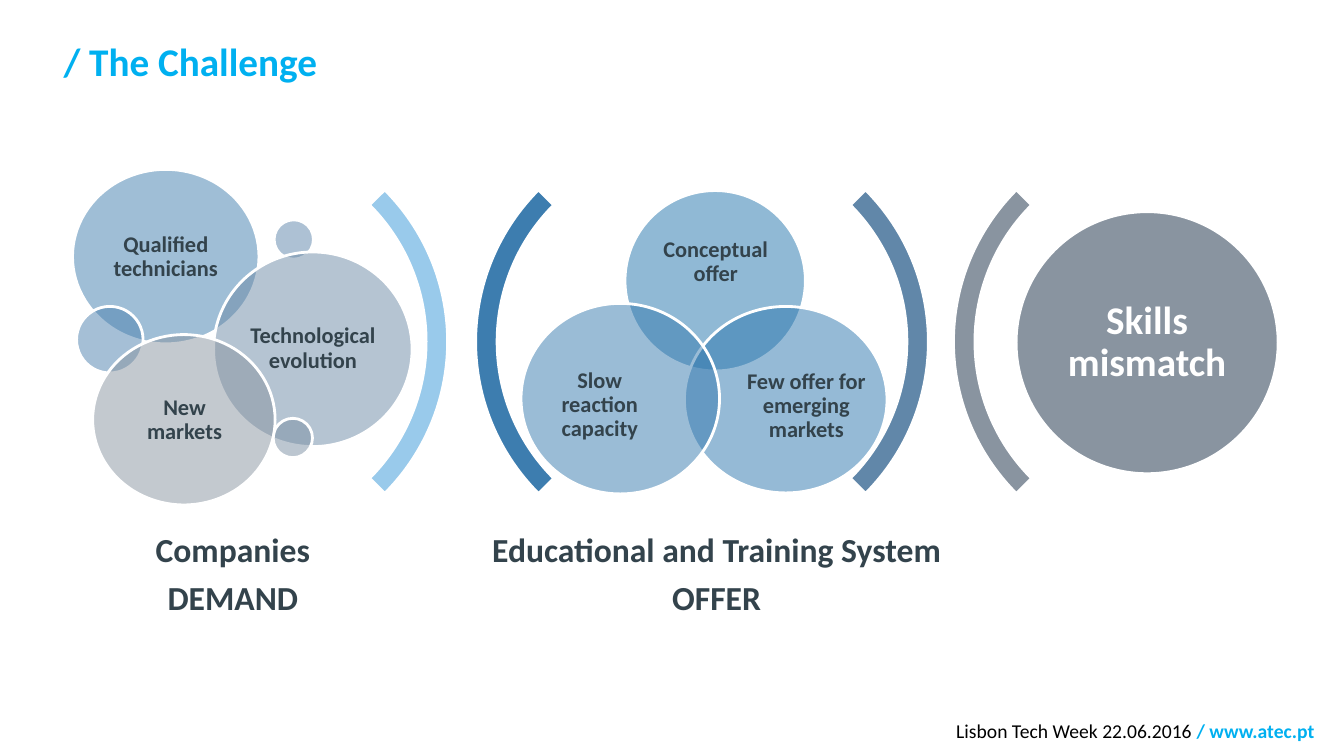
from lxml import etree
from pptx import Presentation
from pptx.dml.color import RGBColor
from pptx.enum.shapes import MSO_SHAPE
from pptx.enum.text import MSO_ANCHOR, PP_ALIGN
from pptx.oxml.ns import qn
from pptx.util import Pt

ELLIPSE, BLOCK_ARC = MSO_SHAPE.OVAL, MSO_SHAPE.BLOCK_ARC
TOP, MIDDLE = MSO_ANCHOR.TOP, MSO_ANCHOR.MIDDLE
LEFT, CENTER, RIGHT = PP_ALIGN.LEFT, PP_ALIGN.CENTER, PP_ALIGN.RIGHT

WHITE = RGBColor(0xFF, 0xFF, 0xFF)
BLACK = RGBColor(0x00, 0x00, 0x00)
CYAN = RGBColor(0x00, 0xB0, 0xF0)
DARK = RGBColor(0x33, 0x43, 0x4C)
SKY = RGBColor(0x99, 0xCA, 0xEB)
BLUE = RGBColor(0x3D, 0x7D, 0xAF)
STEEL = RGBColor(0x61, 0x87, 0xA9)
GREY = RGBColor(0x89, 0x94, 0xA0)
CONCEPT_BLUE = RGBColor(0x22, 0x74, 0xAC)
EMERGING_BLUE = RGBColor(0x2C, 0x77, 0xAE)
REACTION_BLUE = RGBColor(0x36, 0x7A, 0xAF)
QUALIFIED_BLUE = RGBColor(0x41, 0x7E, 0xAF)
LEFT_DOT_BLUE = RGBColor(0x4D, 0x81, 0xAF)
TOP_DOT_BLUE = RGBColor(0x5C, 0x85, 0xAB)
TECHNOLOGY_BLUE = RGBColor(0x6C, 0x8A, 0xA6)
LOW_DOT_GREY = RGBColor(0x7B, 0x8F, 0xA3)

deck = Presentation()
deck.slide_width, deck.slide_height = Pt(960), Pt(540)
page = deck.slides.add_slide(deck.slide_layouts[6])


def add_outlined(kind, place, color, opacity=100):
    shape = page.shapes.add_shape(kind, *map(Pt, place))
    shape.shadow.inherit = False
    shape.fill.solid()
    shape.fill.fore_color.rgb = color
    shape.line.color.rgb = WHITE
    shape.line.width = Pt(2)
    if opacity < 100:
        tint = shape.fill._xPr.find(qn("a:solidFill"))[0]
        etree.SubElement(tint, qn("a:alpha")).set("val", str(opacity * 1000))
    return shape


def add_text(place, lines, size, color, inset=0, align=CENTER, anchor=MIDDLE,
             spacing=0.9, bold=True):
    box = page.shapes.add_textbox(*map(Pt, place))
    frame = box.text_frame
    frame.word_wrap = True
    frame.vertical_anchor = anchor
    frame.margin_left = frame.margin_right = Pt(inset)
    frame.margin_top = frame.margin_bottom = Pt(inset)
    frame.text = "\n".join(lines)
    for para in frame.paragraphs:
        para.alignment = align
        para.line_spacing = spacing
        for span in para.runs:
            span.font.name = "Calibri"
            span.font.size = Pt(size)
            span.font.bold = bold
            span.font.color.rgb = color
    for para in frame.paragraphs[:-1]:
        para.space_after = Pt(0.35 * size)
    return frame


# Title
add_text((45.4, 25.9, 770.4, 45.4), ["/ The Challenge"], 28, CYAN,
         align=LEFT, anchor=TOP, spacing=1.03)

# Brackets between the three groups
for left, rotation, color in [(13, 90, SKY), (339.8, 270, BLUE),
                              (356.4, 90, STEEL), (681.1, 270, GREY)]:
    arc = add_outlined(BLOCK_ARC, (left, 90.7, 306.7, 306.7), color)
    arc.rotation = rotation
    # Angles of 225 and 315 degrees, then the band thickness
    for index, value in enumerate((135, 189, 0.05)):
        arc.adjustments[index] = value

# Translucent circles: place, colour, label, label place, label inset
circles = [
    ((446.4, 136.1, 128.9, 128.9), CONCEPT_BLUE,
     "Conceptual offer", (463.7, 158.4, 95, 58.3), 0),
    ((488.9, 218.9, 144.7, 133.2), EMERGING_BLUE,
     "Few offer for emerging markets", (532.8, 253.4, 86.4, 73.4), 0),
    ((372.2, 216.7, 141.8, 136.1), REACTION_BLUE,
     "Slow reaction capacity", (385.9, 252, 85, 74.9), 0),
    ((51.8, 121, 133.2, 124.6), QUALIFIED_BLUE,
     "Qualified technicians", (71.3, 139.7, 94.3, 87.8), 5),
    ((54.7, 218.9, 47.5, 47.5), LEFT_DOT_BLUE, None, None, 0),
    ((195.8, 157, 28.1, 28.1), TOP_DOT_BLUE, None, None, 0),
    ((152.6, 180, 141.8, 139), TECHNOLOGY_BLUE,
     "Technological evolution", (173.5, 200.2, 100.1, 97.9), 5),
    ((195.1, 298.8, 28.1, 28.1), LOW_DOT_GREY, None, None, 0),
    ((66.2, 239, 130.3, 121.7), GREY,
     "New markets", (85.7, 257, 92.2, 86.4), 5),
]
for place, color, label, label_place, inset in circles:
    add_outlined(ELLIPSE, place, color, opacity=50)
    if label:
        add_text(label_place, [label], 16, DARK, inset)

# Result
add_outlined(ELLIPSE, (725.8, 151.2, 187.2, 187.2), GREY)
add_text((753.1, 178.6, 132.5, 132.5), ["Skills mismatch"], 28, WHITE, 8.6)

# Group captions
add_text((49.7, 380.2, 233.3, 61.2), ["Companies", "DEMAND"], 24, DARK, 7.2)
add_text((342.7, 380.2, 338.4, 61.2),
         ["Educational and Training System", "OFFER"], 24, DARK, 7.2)

# Footer
footer = add_text((45.4, 505.4, 893.5, 34.6), ["Lisbon Tech Week 22.06.2016 "],
                  14, BLACK, align=RIGHT, anchor=TOP, spacing=1.5, bold=False)
address = footer.paragraphs[0].add_run()
address.text = "/ www.atec.pt"
address.font.name = "Calibri"
address.font.size = Pt(14)
address.font.bold = True
address.font.color.rgb = CYAN
# Right edge of the footer text
footer.margin_right = Pt(0)

deck.save("out.pptx")
